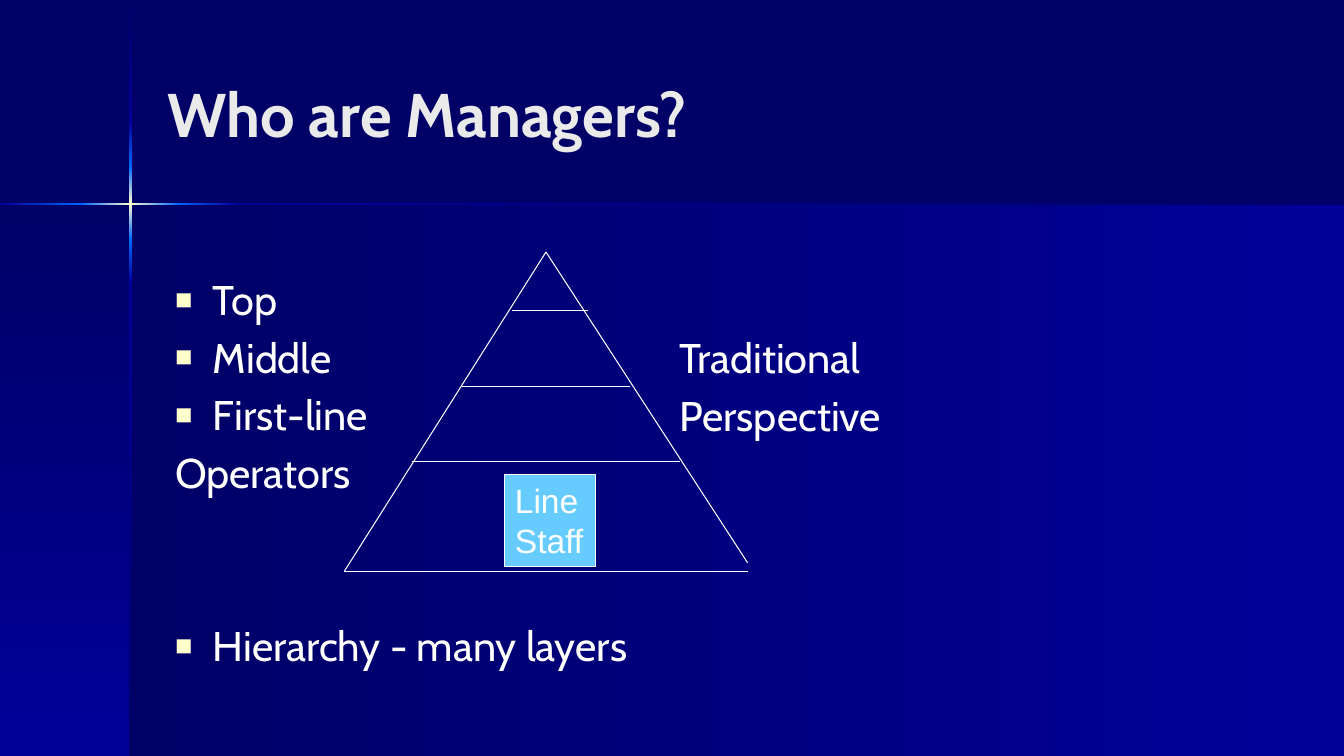
"""Build the slide on managers with its pyramid of levels."""
from copy import deepcopy

from pptx import Presentation
from pptx.dml.color import RGBColor as RGB
from pptx.enum import shapes, text
from pptx.oxml import ns
from pptx.util import Pt


class Theme:
    dark = RGB.from_string("000066")
    mid = RGB.from_string("000099")
    blue = RGB.from_string("0066FF")
    cream = RGB.from_string("FFFFCC")
    sky = RGB.from_string("66CCFF")
    white = RGB.from_string("FFFFFF")
    pale = RGB.from_string("EAEAEA")
    font = "Cabin"
    plain = "Arial"
    title = Pt(44)
    body = Pt(29.6)
    label = Pt(24)
    rule = Pt(0.75)


deck = Presentation()
deck.slide_width, deck.slide_height = Pt(960), Pt(540)
slide = deck.slides.add_slide(deck.slide_layouts[6])
slide.background.fill.solid()
slide.background.fill.fore_color.rgb = Theme.dark


def add_fade(x, y, wide, high, angle, tones):
    """Add a borderless rectangle that fades evenly through the tones."""
    band = slide.shapes.add_shape(
        shapes.MSO_SHAPE.RECTANGLE, Pt(x), Pt(y), Pt(wide), Pt(high))
    band.shadow.inherit = False
    band.line.fill.background()
    band.fill.gradient()
    band.fill.gradient_angle = angle
    stops = band._element.find(".//" + ns.qn("a:gsLst"))
    for extra in tones[2:]:
        stops.append(deepcopy(stops[-1]))
    for i, (stop, tone) in enumerate(zip(band.fill.gradient_stops, tones)):
        stop.position = i / (len(tones) - 1)
        stop.color.rgb = tone


def add_text(box, lines, font, size, tone, gap=0):
    """Fill a box with one left-aligned paragraph per line."""
    frame = box.text_frame
    frame.text = "\n".join(lines)
    for i, para in enumerate(frame.paragraphs):
        para.alignment = text.PP_ALIGN.LEFT
        para.space_before = Pt(gap if i else 0)
        for run in para.runs:
            run.font.name, run.font.size = font, size
            run.font.color.rgb = tone
    return frame


down = 270
grow = (Theme.dark, Theme.mid)
rise = (Theme.mid, Theme.blue)
glow = (Theme.blue, Theme.cream, Theme.blue)

add_fade(93, 145.5, 867, 394.5, 0, grow)
add_fade(0, 145.5, 93, 394.5, down, grow)
for start, end, tones in ((0.7, 87, grow), (87, 119, rise), (119, 171.5, glow),
                          (171.5, 203, rise[::-1]), (203, 540, grow[::-1])):
    add_fade(92.2, start, 2.2, end - start, down, tones)
for start, end, tones in ((0, 58.3, rise), (58.3, 128, glow),
                          (128, 170, rise[::-1]), (170, 960, grow[::-1])):
    add_fade(start, 144.7, end - start, 1.5, 0, tones)

title = slide.shapes.add_textbox(Pt(112.3), Pt(23.8), Pt(792), Pt(113))
frame = add_text(title, ["Who are Managers?"], Theme.font, Theme.title, Theme.pale)
frame.word_wrap = True
frame.vertical_anchor = text.MSO_ANCHOR.MIDDLE
frame.paragraphs[0].runs[0].font.bold = True

gap, pitch = 5.5, 41.4
top = 192.5
levels = slide.shapes.add_textbox(Pt(118), Pt(top), Pt(350), Pt(300))
frame = add_text(
    levels, ["Top", "Middle", "First-line", "Operators", "Hierarchy - many layers"],
    Theme.font, Theme.body, Theme.white, gap)
frame.word_wrap = True
frame.paragraphs[-1].space_before = Pt(gap + 2 * pitch)
for para in frame.paragraphs:
    if para.text == "Operators":
        continue
    props = para._p.get_or_add_pPr()
    props.set("marL", str(Pt(27)))
    props.set("indent", str(-Pt(27)))
    tint = props.makeelement(ns.qn("a:buClr"), {})
    tint.append(tint.makeelement(ns.qn("a:srgbClr"), {"val": str(Theme.cream)}))
    props.append(tint)
    props.append(props.makeelement(ns.qn("a:buSzPct"), {"val": "70000"}))
    props.append(props.makeelement(ns.qn("a:buFont"), {"typeface": Theme.plain}))
    props.append(props.makeelement(ns.qn("a:buChar"), {"char": "■"}))

view = slide.shapes.add_textbox(Pt(478), Pt(top + pitch), Pt(220), Pt(90))
frame = add_text(view, ["Traditional", "Perspective"],
                 Theme.font, Theme.body, Theme.white, gap)
frame.word_wrap = True

sides = [(390, 180, 246, 408), (390, 180, 534, 402), (246, 408, 534, 408)]
tiers = [(366 - 36 * i, 222 + 54 * i, right, 222 + 54 * i)
         for i, right in enumerate((420, 450, 486))]
for ends in sides + tiers:
    edge = slide.shapes.add_connector(
        shapes.MSO_CONNECTOR.STRAIGHT, *(Pt(v) for v in ends))
    edge.line.color.rgb = Theme.white
    edge.line.width = Theme.rule
    props = edge._element.spPr
    props.append(props.makeelement(ns.qn("a:effectLst"), {}))

staff = slide.shapes.add_shape(
    shapes.MSO_SHAPE.RECTANGLE, Pt(360.7), Pt(339), Pt(64.8), Pt(65.5))
staff.shadow.inherit = False
staff.fill.solid()
staff.fill.fore_color.rgb = Theme.sky
staff.line.color.rgb = Theme.white
staff.line.width = Theme.rule
frame = add_text(staff, ["Line", "Staff"], Theme.plain, Theme.label, Theme.white)
frame.word_wrap = False
frame.vertical_anchor = text.MSO_ANCHOR.TOP

deck.save("out.pptx")
